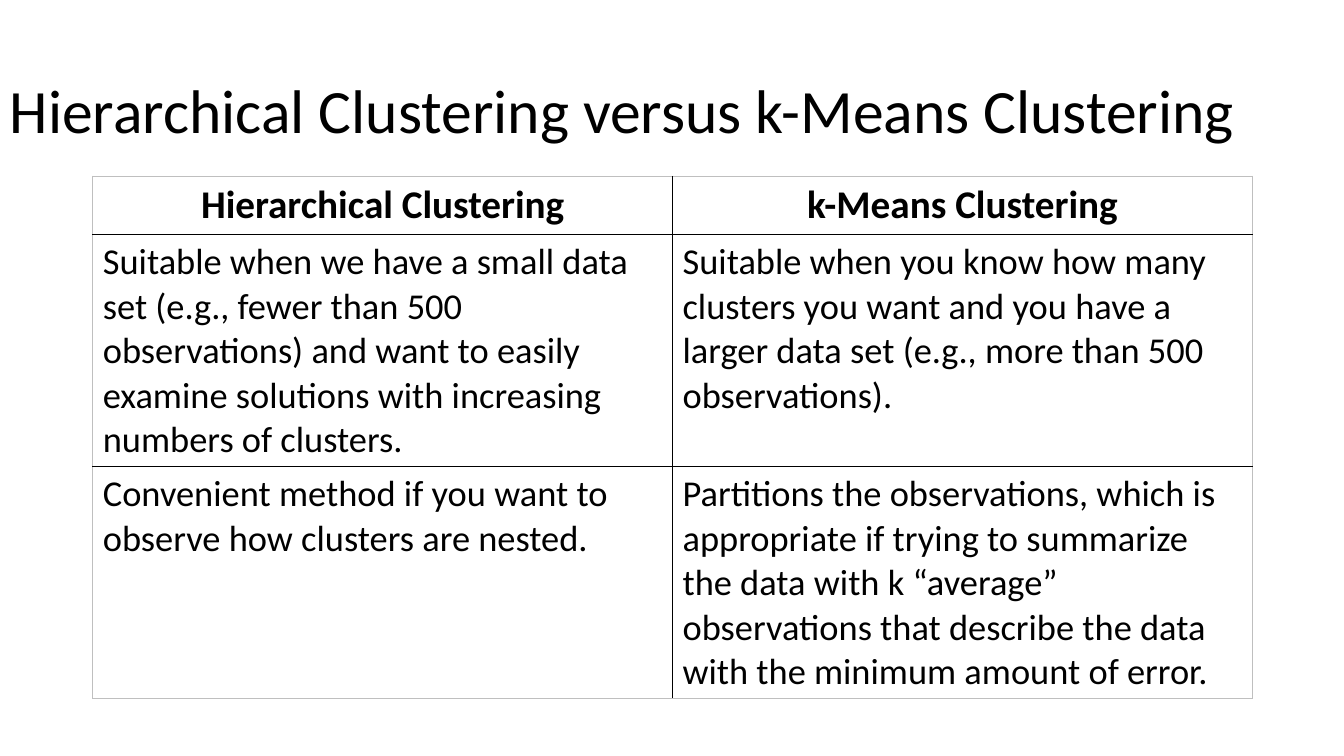
import pptx
import pptx.util
import pptx.dml.color
import pptx.enum.text
import pptx.oxml.ns
import lxml.etree
from pptx.util import Inches

HUES = {"text": "000000", "rule": "000000", "edge": "BFBFBF"}
ALIGN = pptx.enum.text.PP_ALIGN
ANCHOR = pptx.enum.text.MSO_ANCHOR


def put(frame, text, size, bold=False, align=ALIGN.LEFT, space=1.0):
    frame.word_wrap = True
    para = frame.paragraphs[0]
    para.alignment = align
    para.line_spacing = space
    run = para.add_run()
    run.text = text
    run.font.name = "Calibri"
    run.font.size = pptx.util.Pt(size)
    run.font.bold = bold
    run.font.color.rgb = pptx.dml.color.RGBColor.from_string(HUES["text"])


def rule(cell, side, hue, width):
    props = cell._tc.get_or_add_tcPr()
    qn = pptx.oxml.ns.qn
    line = lxml.etree.SubElement(props, qn("a:ln" + side), w=str(pptx.util.Pt(width)))
    fill = lxml.etree.SubElement(line, qn("a:solidFill"))
    lxml.etree.SubElement(fill, qn("a:srgbClr"), val=hue)


deck = pptx.Presentation()
deck.slide_width = Inches(13.33)
deck.slide_height = Inches(7.5)
slide = deck.slides.add_slide(deck.slide_layouts[6])

# Title
title = slide.shapes.add_textbox(Inches(0), Inches(0.4), Inches(13.33), Inches(1.45))
title.text_frame.vertical_anchor = ANCHOR.MIDDLE
put(title.text_frame, "Hierarchical Clustering versus k-Means Clustering", 44, space=0.9)

# Comparison table
rows = [
    ("Hierarchical Clustering", "k-Means Clustering"),
    ("Suitable when we have a small data set (e.g., fewer than 500 observations) "
     "and want to easily examine solutions with increasing numbers of clusters.",
     "Suitable when you know how many clusters you want and you have a larger "
     "data set (e.g., more than 500 observations)."),
    ("Convenient method if you want to observe how clusters are nested.",
     "Partitions the observations, which is appropriate if trying to summarize "
     "the data with k “average” observations that describe the data with the "
     "minimum amount of error."),
]
highs = [0.58, 2.3, 2.3]
table = slide.shapes.add_table(
    len(rows), 2, Inches(0.92), Inches(1.75), Inches(11.5), Inches(sum(highs))).table
table.first_row = False
table.horz_banding = False
for col in table.columns:
    col.width = Inches(5.75)

for r, texts in enumerate(rows):
    table.rows[r].height = Inches(highs[r])
    head = r == 0
    for c, text in enumerate(texts):
        cell = table.cell(r, c)
        # Grey outside, black between cells
        outer = {"L": c == 0, "R": c == 1, "T": head, "B": r == len(rows) - 1}
        for side, out in outer.items():
            rule(cell, side, HUES["edge" if out else "rule"], 0.75 if out else 1)
        cell.fill.background()
        put(cell.text_frame, text, 28 if head else 26, bold=head,
            align=ALIGN.CENTER if head else ALIGN.LEFT)

deck.save("out.pptx")
